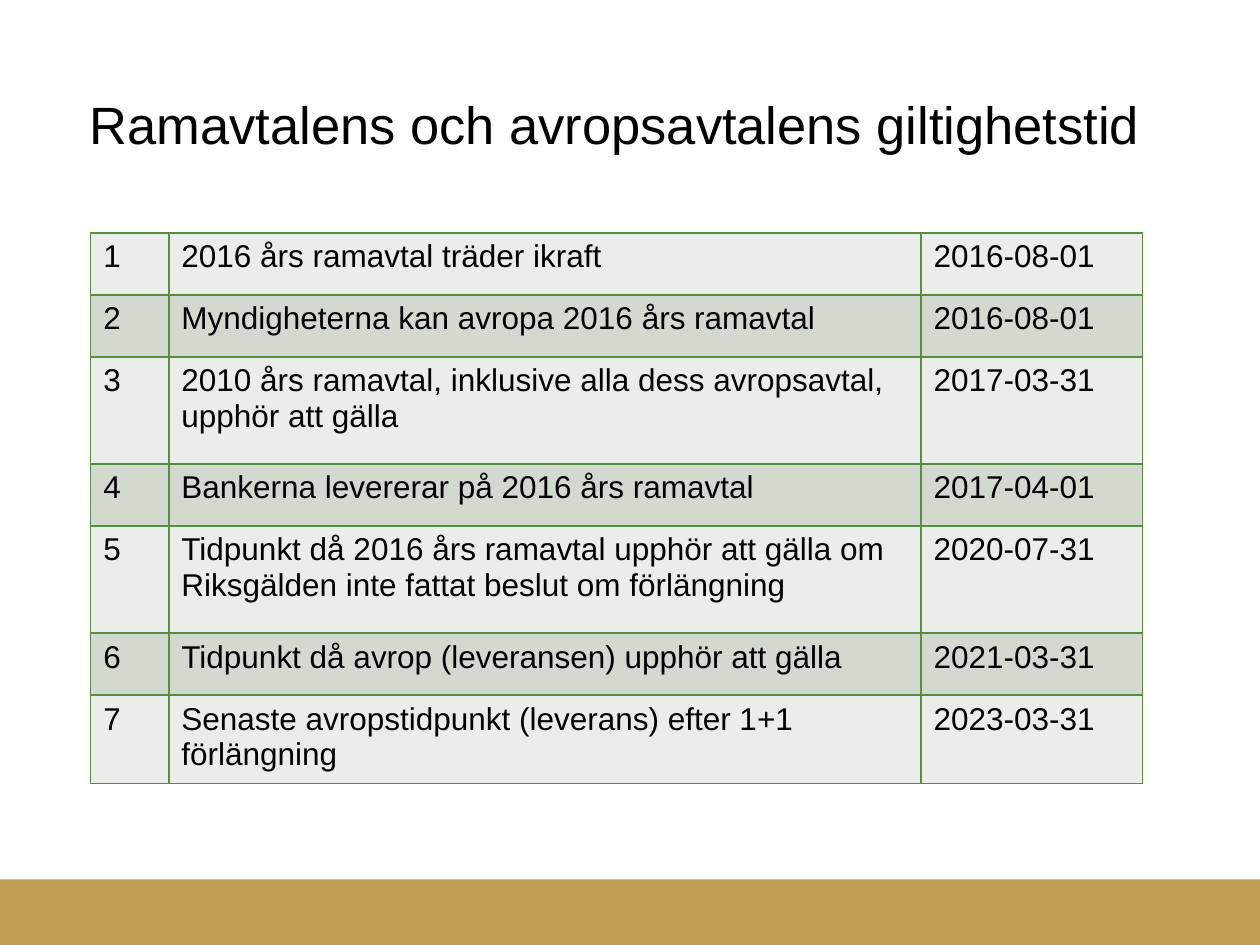
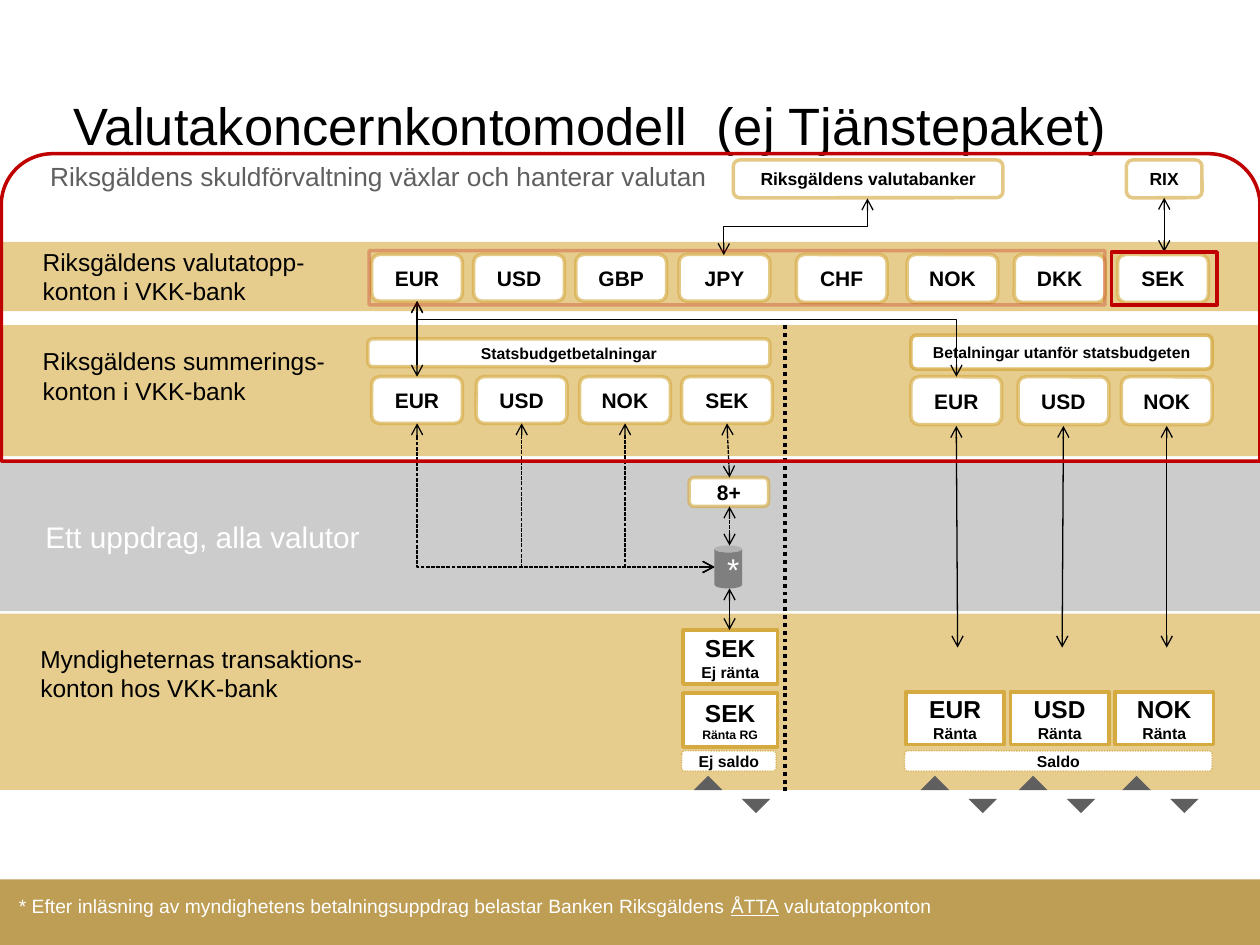
"""Build two slides on framework agreements and a currency account model."""
from pptx import Presentation
from pptx.dml.color import RGBColor
from pptx.enum.dml import MSO_LINE
from pptx.enum.shapes import MSO_CONNECTOR, MSO_SHAPE
from pptx.enum.text import MSO_ANCHOR, PP_ALIGN
from pptx.oxml.ns import qn
from pptx.util import Inches, Pt
from lxml import etree

RECT, ROUND = MSO_SHAPE.RECTANGLE, MSO_SHAPE.ROUNDED_RECTANGLE
ARCH, CAN, WEDGE = MSO_SHAPE.ROUND_2_SAME_RECTANGLE, MSO_SHAPE.CAN, MSO_SHAPE.RIGHT_TRIANGLE
DOT, DASH = MSO_LINE.ROUND_DOT, MSO_LINE.SQUARE_DOT
LINE, ELBOW = MSO_CONNECTOR.STRAIGHT, MSO_CONNECTOR.ELBOW
TOP, MID, LOW = MSO_ANCHOR.TOP, MSO_ANCHOR.MIDDLE, MSO_ANCHOR.BOTTOM
LEFT, MIDST = PP_ALIGN.LEFT, PP_ALIGN.CENTER

FONT = "Arial"
COLS, ROWS = 100, 75
UNIT = 0.1
HUE = {
    "black": "000000", "white": "FFFFFF", "band": "BE9E55", "sand": "E6CC8D",
    "gold": "D5AA41", "mist": "CCCCCC", "slate": "5F5F5F", "steel": "7F7F7F",
    "red": "C00000", "leaf": "5A8C46", "pale": "EAEEE9", "sage": "D2DACF",
}
DATES = [
    ("2016 års ramavtal träder ikraft", "2016-08-01"),
    ("Myndigheterna kan avropa 2016 års ramavtal", "2016-08-01"),
    ("2010 års ramavtal, inklusive alla dess avropsavtal, upphör att gälla", "2017-03-31"),
    ("Bankerna levererar på 2016 års ramavtal", "2017-04-01"),
    ("Tidpunkt då 2016 års ramavtal upphör att gälla om Riksgälden inte fattat "
     "beslut om förlängning", "2020-07-31"),
    ("Tidpunkt då avrop (leveransen) upphör att gälla", "2021-03-31"),
    ("Senaste avropstidpunkt (leverans) efter 1+1 förlängning", "2023-03-31"),
]
TALL = (2, 4)


def grid(*marks):
    """Turn grid marks into slide lengths."""
    return [Inches(mark * UNIT) for mark in marks]


def tint(name):
    """Return the named colour."""
    return RGBColor.from_string(HUE[name])


def add(parent, tag, **attrs):
    """Append a drawing element to parent."""
    node = etree.SubElement(parent, qn(tag))
    for key, value in attrs.items():
        node.set(key, str(value))
    return node


def write(frame, text, size=14, color="black", bold=False, align=LEFT,
          anchor=None, pad=None, sub=None, under=None):
    """Fill a text frame; later lines take size sub, the word under is underlined."""
    if pad is not None:
        frame.word_wrap = True
        frame.margin_left = frame.margin_right = Inches(pad[0])
        frame.margin_top = frame.margin_bottom = Inches(pad[1])
    if anchor is not None:
        frame.vertical_anchor = anchor
    for i, line in enumerate(text.split("\n")):
        para = frame.add_paragraph() if i else frame.paragraphs[0]
        para.alignment = align
        for part in line.partition(under) if under else [line]:
            run = para.add_run()
            run.text = part
            font = run.font
            font.name, font.bold = FONT, bold
            font.size = Pt(sub if i and sub else size)
            font.color.rgb = tint(color)
            if part == under:
                font.underline = True


def stroke(line, color, width, dash=None, alpha=None):
    """Style an outline or a connector line."""
    line.color.rgb = tint(color)
    line.width = Pt(width)
    if dash is not None:
        line.dash_style = dash
    if alpha:
        add(line._ln.find(".//" + qn("a:srgbClr")), "a:alpha", val=alpha * 1000)


def shape(slide, kind, box, fill=None, edge=None, turn=0):
    """Add a preset shape with an optional fill and edge."""
    item = slide.shapes.add_shape(kind, *grid(*box))
    item.shadow.inherit = False
    item.rotation = turn
    if fill:
        item.fill.solid()
        item.fill.fore_color.rgb = tint(fill)
    else:
        item.fill.background()
    if edge:
        stroke(item.line, *edge)
    else:
        item.line.fill.background()
    return item


def label(slide, box, text, pad=(0.1, 0.05), **look):
    """Add a text box."""
    frame = slide.shapes.add_textbox(*grid(*box)).text_frame
    write(frame, text, pad=pad, **look)


def chip(slide, box, text, size=12, kind=ROUND, edge=("gold", 2, None, 63), sub=None,
         pad=(0.12, 0.06)):
    """Add a white framed box with bold centred text."""
    item = shape(slide, kind, box, "white", edge)
    write(item.text_frame, text, size=size, bold=True, align=MIDST,
          anchor=MID, pad=pad, sub=sub)


def finish(link, dash, heads=True, width=0.75):
    """Style a connector and give it arrowheads."""
    add(link._element.spPr, "a:effectLst")
    stroke(link.line, "black", width, dash)
    if heads:
        for tag in ("a:headEnd", "a:tailEnd"):
            add(link.line._ln, tag, type="arrow")


def arrow(slide, start, end, dash=None, **look):
    """Add a straight connector."""
    link = slide.shapes.add_connector(LINE, *grid(*start, *end))
    finish(link, dash, **look)


def bend(slide, box, turn, flip="", kind=3, adj=None, dash=None):
    """Add an elbow connector, turned and flipped inside its box."""
    x, y, w, h = box
    link = slide.shapes.add_connector(ELBOW, *grid(x, y, x + w, y + h))
    props = link._element.spPr
    frame, geom = props.find(qn("a:xfrm")), props.find(qn("a:prstGeom"))
    frame.set("rot", str(turn * 60000))
    for axis in flip:
        frame.set("flip" + axis, "1")
    geom.set("prst", f"bentConnector{kind}")
    if adj:
        add(geom.find(qn("a:avLst")), "a:gd", name="adj1", fmla=f"val {adj}")
    finish(link, dash)


def start(deck, title, box):
    """Add a slide with the footer band and a title."""
    slide = deck.slides.add_slide(deck.slide_layouts[6])
    shape(slide, RECT, (0, 69.8, COLS, 5.2), "band")
    label(slide, box, title, pad=(0, 0), size=30, anchor=LOW)
    return slide


def border(cell, color):
    """Rule all four sides of a table cell."""
    props = cell._tc.get_or_add_tcPr()
    for side in "LRTB":
        line = add(props, f"a:ln{side}", w=Pt(1))
        add(add(line, "a:solidFill"), "a:srgbClr", val=HUE[color])


def dates(slide):
    """Add the table of validity dates."""
    table = slide.shapes.add_table(len(DATES), 3, *grid(7.2, 18.5, 83.5, 43.7)).table
    table.first_row = table.horz_banding = False
    for col, width in zip(table.columns, grid(6.2, 59.7, 17.6)):
        col.width = width
    for i, entry in enumerate(DATES):
        table.rows[i].height = grid(8.5 if i in TALL else 4.92)[0]
        for cell, text in zip(table.rows[i].cells, (str(i + 1), *entry)):
            border(cell, "leaf")
            cell.fill.solid()
            cell.fill.fore_color.rgb = tint("sage" if i % 2 else "pale")
            write(cell.text_frame, text, size=18)


def bands(slide):
    """Add the horizontal levels of the model and their names."""
    for y, h, fill in ((36.7, 11.8, "mist"), (48.7, 14, "sand"),
                       (25.8, 10.4, "sand"), (19.2, 5.5, "sand")):
        shape(slide, RECT, (0, y, COLS, h), fill)
    label(slide, (0, 36.7, 50, 11.8), "Ett uppdrag, alla valutor", size=17,
          color="white", anchor=MID, pad=(0.36, 0.05))
    label(slide, (3, 12.2, 76.8, 3.6), size=15, color="slate",
          text="Riksgäldens skuldförvaltning växlar och hanterar valutan")
    label(slide, (2.4, 19.1, 24.7, 5.8), "Riksgäldens valutatopp-konton i VKK-bank")
    label(slide, (2.4, 27, 24.7, 5.8), "Riksgäldens summerings-konton i VKK-bank")
    label(slide, (2.4, 50.7, 29.7, 5.5), pad=(0.08, 0.04),
          text="Myndigheternas transaktions-konton hos VKK-bank")


def accounts(slide):
    """Add the account boxes of every level."""
    tops = zip("EUR USD GBP JPY CHF NOK DKK SEK".split(),
               (29.5, 37.6, 45.7, 53.9, 63.2, 72, 80.5, 88.7))
    sums = zip("EUR USD NOK SEK EUR USD NOK".split(),
               (29.5, 37.8, 46, 54.1, 72.3, 80.8, 89))
    for y, row in ((20.2, tops), (29.9, sums)):
        for name, x in row:
            chip(slide, (x, y, 7.2, 3.8 if x > 60 else 3.7), name)
    chip(slide, (29.2, 26.9, 31.9, 2.2), "Statsbudgetbetalningar", 9)
    chip(slide, (72.3, 26.6, 23.9, 2.7), "Betalningar utanför statsbudgeten", 9,
         edge=("gold", 2, None, 80))
    chip(slide, (54.7, 37.9, 6.3, 2.3), "8+")
    chip(slide, (89.4, 12.7, 6, 3), "RIX", 10, pad=(0.1, 0.05))
    chip(slide, (58.2, 12.7, 21.4, 3), "Riksgäldens valutabanker", 10)
    solid = ("gold", 2)
    for i, name in enumerate(("EUR", "USD", "NOK")):
        chip(slide, (71.9 + 8.3 * i, 54.9, 7.8, 4.2), f"{name}\nRänta", 14,
             RECT, solid, sub=9, pad=(0.1, 0.05))
    chip(slide, (54.2, 50, 7.5, 4.3), "SEK\nEj ränta", 14, RECT, solid, sub=9)
    chip(slide, (54.2, 55, 7.5, 4.3), "SEK\nRänta RG", 14, RECT, solid, sub=7)
    for x, w, text in ((54.1, 7.5, "Ej saldo"), (71.8, 24.4, "Saldo")):
        chip(slide, (x, 59.6, w, 1.6), text, 9, edge=("gold", 0.75, DOT, 80))
    for x in (55.4, 73.4, 81.2, 89.4):
        shape(slide, WEDGE, (x, 61.9, 1.6, 1.6), "slate", turn=135)
        shape(slide, WEDGE, (x + 3.8, 62.6, 1.6, 1.6), "slate", turn=315)
    can = shape(slide, CAN, (56.7, 43.3, 2.2, 3.4), "steel")
    write(can.text_frame, "*", size=18, color="white", align=MIDST,
          anchor=MID, pad=(0.12, 0.06))


def flows(slide):
    """Add the arrows between the accounts."""
    for low, high in ((76, 75.9), (84.3, 84.4), (92.6, 92.6)):
        arrow(slide, (low, 51.4), (high, 33.8))
    arrow(slide, (57.9, 50), (57.9, 46.7))
    arrow(slide, (57.9, 43.3), (57.9, 40.2), DASH)
    arrow(slide, (57.7, 33.6), (57.9, 37.9), DASH)
    arrow(slide, (33.1, 29.9), (33.1, 23.9))
    arrow(slide, (92.4, 15.7), (92.4, 20))
    arrow(slide, (62.3, 25.8), (62.3, 62.9), DOT, heads=False, width=2.25)
    for x in (49.6, 41.4, 33.1):
        bend(slide, (x, 33.6, 56.7 - x, 11.4), 180, kind=2, dash=DASH)
    bend(slide, (51.5, 5.5, 6, 42.8), 270, "H", adj=23900)
    bend(slide, (60.9, 12.3, 4.5, 11.4), 90, "HV")


def main():
    """Build and save both slides."""
    deck = Presentation()
    deck.slide_width, deck.slide_height = grid(COLS, ROWS)
    dates(start(deck, "Ramavtalens och avropsavtalens giltighetstid",
                (7.1, 2.4, 85.8, 9.9)))
    model = start(deck, "Valutakoncernkontomodell  (ej Tjänstepaket)",
                  (5.8, 0, 88.6, 12.4))
    bands(model)
    accounts(model)
    flows(model)
    label(model, (0.3, 70.4, 77.9, 3.1), size=11, color="white", pad=(0.12, 0.06),
          under="ÅTTA", text="* Efter inläsning av myndighetens betalningsuppdrag "
          "belastar Banken Riksgäldens ÅTTA valutatoppkonton")
    shape(model, RECT, (88.2, 20, 8.4, 4.2), edge=("red", 2))
    shape(model, RECT, (29.3, 19.9, 58.4, 4.3), edge=("red", 2, None, 25))
    shape(model, ARCH, (0.1, 12.2, 99.9, 24.4), edge=("red", 2))
    deck.save("out.pptx")


if __name__ == "__main__":
    main()
